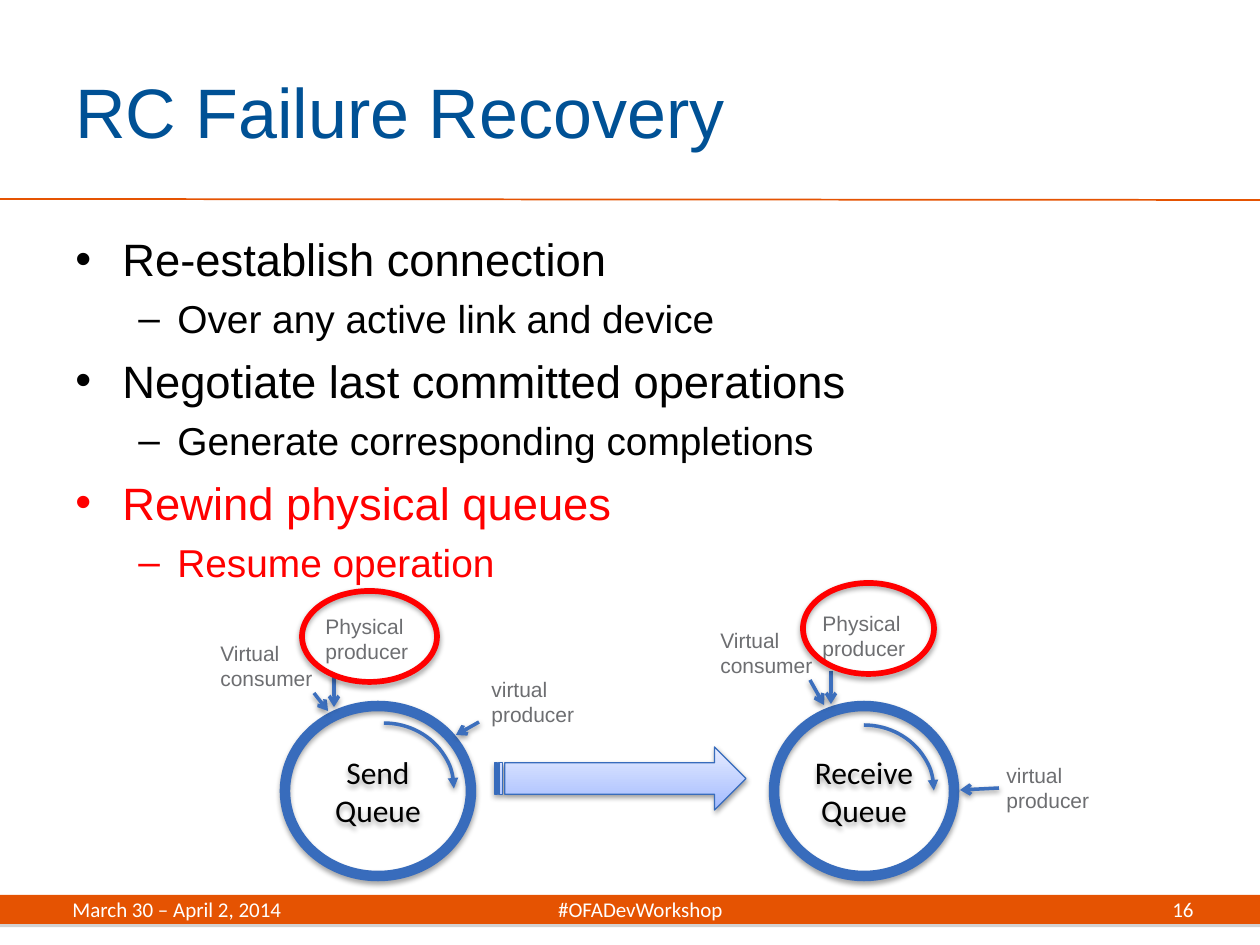
from lxml.etree import SubElement as Sub
from pptx import Presentation
from pptx.dml.color import RGBColor as RGB
from pptx.enum.shapes import MSO_CONNECTOR as Conn, MSO_SHAPE as Kind
from pptx.enum.text import MSO_ANCHOR as Anchor, PP_ALIGN as Align
from pptx.oxml.ns import qn
from pptx.util import Emu, Pt

HUES = {
    "title": "005195", "band": "E55302", "ink": "000000", "hot": "FF0000",
    "note": "6D6E71", "ring": "386CBC", "arrow": "3C6FBD", "pale": "FFFFFF",
    "deep": "A2BAFF", "light": "E6ECFF", "gray": "808080",
}
# Shadows: colour, opacity in percent, blur and distance in points
SOFT = ("ink", 35, 3.1, 1.8)
FIRM = ("ink", 38, 3.1, 1.6)
FLAT = ("gray", 35, 0, 1.8)

NOTE = {"size": 12, "name": "Arial", "hue": "note"}
FOOT = {"size": 12, "name": "Calibri", "hue": "pale"}
HUB = {"size": 18, "name": "Calibri", "hue": "ink"}
HEAD = {"size": 40, "name": "Arial", "hue": "title"}

# Outline levels: bullet, left margin and hang in px, size, space before
LEVELS = [("•", 47, 47, 25.9, 6.4), ("–", 102, 39, 22.2, 5.4)]
POINTS = [
    (0, "Re-establish connection", "ink"),
    (1, "Over any active link and device", "ink"),
    (0, "Negotiate last committed operations", "ink"),
    (1, "Generate corresponding completions", "ink"),
    (0, "Rewind physical queues", "hot"),
    (1, "Resume operation", "hot"),
]

# The two queues: hub, arc and mark boxes, labels, arrows
QUEUES = [
    {
        "hub": (285, 706, 186, 170), "name": ["Send Queue"],
        "arc": (314, 723, 140, 131), "mark": (302, 591, 135, 91),
        "notes": [(["virtual producer"], (479, 670, 118, 63)),
                  (["Virtual", "consumer"], (208, 634, 123, 63)),
                  (["Physical", "producer"], (313, 607, 118, 63))],
        "arrows": [(479, 722, 456, 735), (314, 693, 328, 711),
                   (334, 674, 334, 707)],
    },
    {
        "hub": (774, 706, 180, 170), "name": ["Receive", "Queue"],
        "arc": (794, 725, 140, 131), "mark": (803, 583, 131, 91),
        "notes": [(["virtual producer"], (994, 756, 118, 63)),
                  (["Virtual", "consumer"], (708, 621, 123, 63)),
                  (["Physical", "producer"], (810, 604, 118, 63))],
        "arrows": [(999, 788, 960, 790), (810, 680, 824, 705),
                   (831, 671, 831, 704)],
    },
]


def px(val):
    return Emu(round(val * 914400 / 126))


def rgb(hue):
    return RGB.from_string(HUES[hue])


def shade(item, kind=None):
    """Give an item its own effect list, with a shadow below if asked."""
    props = item.element.spPr
    fx = props.find(qn("a:effectLst"))
    if fx is None:
        fx = Sub(props, qn("a:effectLst"))
    if kind:
        hue, pct, blur, dist = kind
        out = Sub(fx, qn("a:outerShdw"), blurRad=str(Pt(blur)),
                  dist=str(Pt(dist)), dir="5400000", rotWithShape="0")
        tint = Sub(out, qn("a:srgbClr"), val=HUES[hue])
        Sub(tint, qn("a:alpha"), val=str(pct * 1000))


def stroke(item, hue, width, tip=None):
    item.line.color.rgb = rgb(hue)
    item.line.width = Pt(width)
    if tip:
        Sub(item.element.spPr.find(qn("a:ln")), qn("a:tailEnd"), type=tip)


def style(run, fmt):
    for key, val in fmt.items():
        if key == "hue":
            run.font.color.rgb = rgb(val)
        else:
            setattr(run.font, key, Pt(val) if key == "size" else val)


def write(frame, lines, fmt, align=Align.LEFT):
    for num, line in enumerate(lines):
        para = frame.add_paragraph() if num else frame.paragraphs[0]
        para.alignment = align
        run = para.add_run()
        run.text = line
        style(run, fmt)


def text(slide, box, lines, fmt, anchor=Anchor.TOP, align=Align.LEFT):
    frame = slide.shapes.add_textbox(*map(px, box)).text_frame
    frame.word_wrap = True
    frame.vertical_anchor = anchor
    write(frame, lines, fmt, align)
    return frame


def shape(slide, kind, box, fill=None, line=None, tip=None, shadow=None):
    item = slide.shapes.add_shape(kind, *map(px, box))
    item.shadow.inherit = False
    if fill:
        item.fill.solid()
        item.fill.fore_color.rgb = rgb(fill)
    else:
        item.fill.background()
    if line:
        stroke(item, *line, tip)
    else:
        item.line.fill.background()
    shade(item, shadow)
    return item


def link(slide, ends, hue, width, tip=None, shadow=None):
    item = slide.shapes.add_connector(Conn.STRAIGHT, *map(px, ends))
    stroke(item, hue, width, tip)
    shade(item, shadow)


def outline(slide, box):
    frame = text(slide, box, [], {})
    for num, (level, line, hue) in enumerate(POINTS):
        mark, left, hang, size, gap = LEVELS[level]
        para = frame.add_paragraph() if num else frame.paragraphs[0]
        para.level = level
        para.space_before = Pt(gap if num else 0)
        props = para._p.get_or_add_pPr()
        props.set("marL", str(px(left)))
        props.set("indent", str(-px(hang)))
        Sub(props, qn("a:buFont"), typeface="Arial")
        Sub(props, qn("a:buChar"), char=mark)
        run = para.add_run()
        run.text = line
        style(run, {"size": size, "name": "Arial", "hue": hue})


def footer(slide):
    shape(slide, Kind.RECTANGLE, (0, 895, 1260, 29), "band", shadow=FLAT)
    frame = text(slide, (60, 895, 1140, 29),
                 ["March 30 – April 2, 2014\t#OFADevWorkshop"],
                 FOOT, Anchor.MIDDLE)
    tabs = Sub(frame.paragraphs[0]._p.get_or_add_pPr(), qn("a:tabLst"))
    Sub(tabs, qn("a:tab"), pos=str(px(568)), algn="ctr")
    text(slide, (1056, 895, 150, 29), ["16"], FOOT, Anchor.MIDDLE, Align.RIGHT)


def queue(slide, part):
    hub = shape(slide, Kind.OVAL, part["hub"], line=("ring", 6), shadow=SOFT)
    write(hub.text_frame, part["name"], HUB, Align.CENTER)
    shape(slide, Kind.ARC, part["arc"], line=("arrow", 2), tip="triangle",
          shadow=FIRM)
    for lines, box in part["notes"]:
        text(slide, box, lines, NOTE)
    for ends in part["arrows"]:
        link(slide, ends, "arrow", 2, "arrow", FIRM)
    shape(slide, Kind.OVAL, part["mark"], line=("hot", 3.25), shadow=SOFT)


def flow(slide, box):
    item = shape(slide, Kind.STRIPED_RIGHT_ARROW, box, "light",
                 ("ring", 0.75), shadow=FIRM)
    item.fill.gradient()
    item.fill.gradient_angle = 90
    for stop, hue in zip(item.fill.gradient_stops, ("deep", "light")):
        stop.color.rgb = rgb(hue)


def main():
    deck = Presentation()
    deck.slide_width, deck.slide_height = px(1260), px(945)
    slide = deck.slides.add_slide(deck.slide_layouts[6])
    # Frame of the slide
    footer(slide)
    link(slide, (0, 199, 1260, 200), "band", 1)
    text(slide, (63, 32, 1029, 157), ["RC Failure Recovery"], HEAD,
         Anchor.MIDDLE)
    # Queue diagram
    for part in QUEUES:
        queue(slide, part)
    flow(slide, (495, 747, 251, 63))
    # Main points
    outline(slide, (63, 225, 1134, 360))
    deck.save("out.pptx")


if __name__ == "__main__":
    main()
